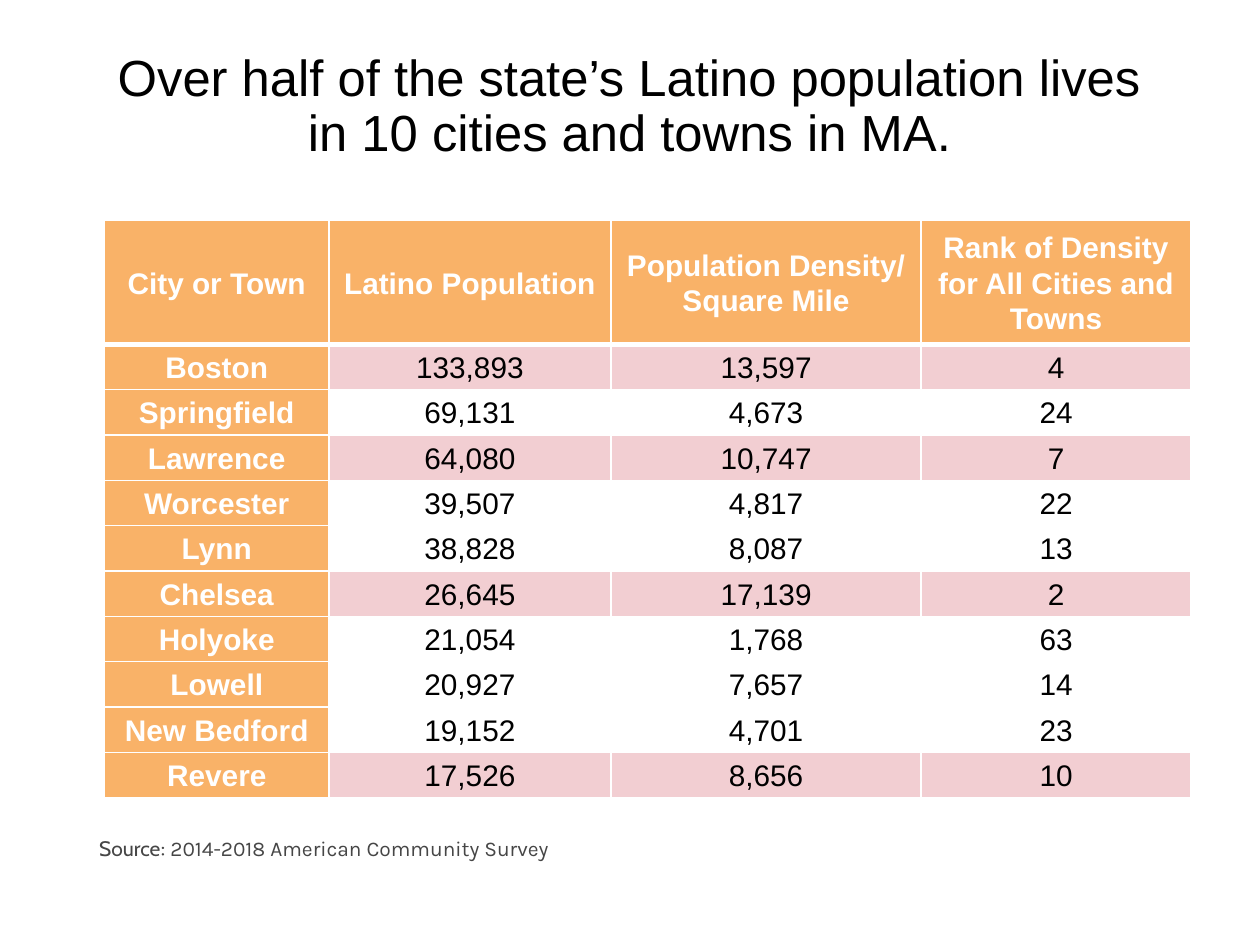
import dataclasses

import lxml.etree
import pptx
import pptx.dml.color
import pptx.enum.text
import pptx.oxml.ns
import pptx.util

Cm = pptx.util.Cm
Pt = pptx.util.Pt
CENTER = pptx.enum.text.PP_ALIGN.CENTER


@dataclasses.dataclass(frozen=True)
class Theme:
    orange: str = "F9B268"
    pink: str = "F2CED2"
    white: str = "FFFFFF"
    black: str = "000000"
    gray: str = "464646"
    main_font: str = "Arial"
    title_size: float = 29
    table_size: float = 17
    source_size: float = 12


THEME = Theme()
HEADERS = ["City or Town", "Latino Population", "Population Density/ Square Mile",
           "Rank of Density for All Cities and Towns"]
CITIES = [
    ("Boston", 133893, 13597, 4),
    ("Springfield", 69131, 4673, 24),
    ("Lawrence", 64080, 10747, 7),
    ("Worcester", 39507, 4817, 22),
    ("Lynn", 38828, 8087, 13),
    ("Chelsea", 26645, 17139, 2),
    ("Holyoke", 21054, 1768, 63),
    ("Lowell", 20927, 7657, 14),
    ("New Bedford", 19152, 4701, 23),
    ("Revere", 17526, 8656, 10),
]
TOP_RANK = 10  # cities ranked this high or better are highlighted
COLUMN_WIDTHS = [4.52, 5.69, 6.25, 5.44]
HEADER_HEIGHT = 2.49


def rgb(color):
    return pptx.dml.color.RGBColor.from_string(color)


def style_font(font, name, size, color, bold=False):
    font.name = name
    font.size = Pt(size)
    font.bold = bold
    font.color.rgb = rgb(color)


def add_text_box(slide, box):
    text_frame = slide.shapes.add_textbox(*(Cm(length) for length in box)).text_frame
    text_frame.word_wrap = True
    return text_frame


def set_borders(cell, widths):
    """Draw white borders, with widths in points for left, right, top and bottom."""
    properties = cell._tc.get_or_add_tcPr()
    qn = pptx.oxml.ns.qn
    for index, (side, width) in enumerate(zip("LRTB", widths)):
        line = lxml.etree.Element(qn(f"a:ln{side}"), w=str(Pt(width)))
        fill = lxml.etree.SubElement(line, qn("a:solidFill"))
        lxml.etree.SubElement(fill, qn("a:srgbClr"), val=THEME.white)
        properties.insert(index, line)


def fill_cell(cell, text, fill, color, bold, borders):
    cell.vertical_anchor = pptx.enum.text.MSO_ANCHOR.MIDDLE
    cell.margin_left = cell.margin_right = Cm(0.3)
    cell.margin_top = cell.margin_bottom = 0
    cell.text = text
    paragraph = cell.text_frame.paragraphs[0]
    paragraph.alignment = CENTER
    paragraph.line_spacing = 1.07
    style_font(paragraph.font, THEME.main_font, THEME.table_size, color, bold)
    cell.fill.solid()
    cell.fill.fore_color.rgb = rgb(fill)
    set_borders(cell, borders)


def add_title(slide, box):
    text_frame = add_text_box(slide, box)
    text_frame.vertical_anchor = pptx.enum.text.MSO_ANCHOR.BOTTOM
    paragraph = text_frame.paragraphs[0]
    paragraph.text = ("Over half of the state’s Latino population lives "
                      "in 10 cities and towns in MA.")
    paragraph.alignment = CENTER
    paragraph.line_spacing = 0.9
    style_font(paragraph.font, THEME.main_font, THEME.title_size, THEME.black)


def add_city_table(slide, box):
    left, top, width, height = (Cm(length) for length in box)
    table = slide.shapes.add_table(
        len(CITIES) + 1, len(HEADERS), left, top, width, height).table
    for column, column_width in zip(table.columns, COLUMN_WIDTHS):
        column.width = Cm(column_width)
    header_height = Cm(HEADER_HEIGHT)
    city_height = (height - header_height) // len(CITIES)
    for index, row in enumerate(table.rows):
        row.height = city_height if index else header_height

    # Header row, with a heavier rule below it
    for column, header in enumerate(HEADERS):
        fill_cell(table.cell(0, column), header, THEME.orange, THEME.white, True,
                  (1, 1, 1, 3))

    # City rows
    for row, (city, *figures) in enumerate(CITIES, start=1):
        borders = (1, 1, 3 if row == 1 else 1, 1)
        fill_cell(table.cell(row, 0), city, THEME.orange, THEME.white, True, borders)
        row_fill = THEME.pink if figures[-1] <= TOP_RANK else THEME.white
        for column, figure in enumerate(figures, start=1):
            fill_cell(table.cell(row, column), f"{figure:,}", row_fill, THEME.black,
                      False, borders)


def add_source(slide, box):
    paragraph = add_text_box(slide, box).paragraphs[0]
    for text, font_name in [("Source", "Cabin"),
                            (": 2014-2018 American Community Survey", "Karla")]:
        run = paragraph.add_run()
        run.text = text
        style_font(run.font, font_name, THEME.source_size, THEME.gray)


def main():
    presentation = pptx.Presentation()
    presentation.slide_width = Cm(25.4)
    presentation.slide_height = Cm(19.05)
    slide = presentation.slides.add_slide(presentation.slide_layouts[6])
    add_title(slide, (1.75, 0.81, 21.9, 2.59))
    add_city_table(slide, (2.11, 4.45, 21.9, 11.63))
    add_source(slide, (1.75, 16.71, 22.58, 0.76))
    presentation.save("out.pptx")


if __name__ == "__main__":
    main()
